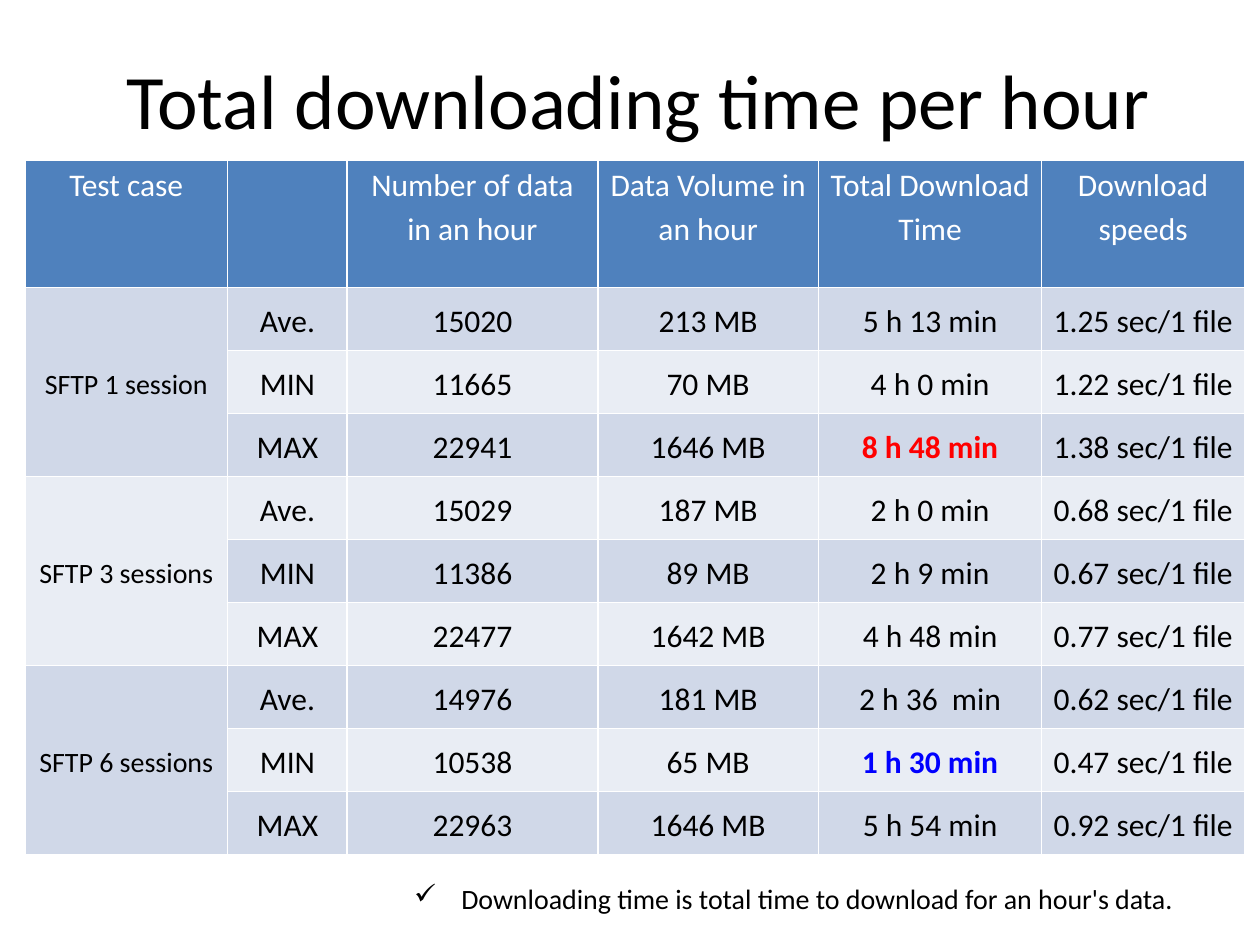
"""Build a slide with a table of total downloading time per hour."""
from lxml import etree
from pptx import Presentation
from pptx.dml.color import RGBColor
from pptx.enum.text import MSO_ANCHOR, PP_ALIGN
from pptx.oxml.ns import qn
from pptx.util import Cm, Pt

CENTER, LEFT = PP_ALIGN.CENTER, PP_ALIGN.LEFT
TOP, MIDDLE = MSO_ANCHOR.TOP, MSO_ANCHOR.MIDDLE
FONT = "Calibri"
COLORS = {
    "white": "FFFFFF",
    "black": "000000",
    "header": "4F81BD",
    "dark_band": "D0D8E8",
    "light_band": "E9EDF4",
    "slowest": "FF0000",
    "fastest": "0000FF",
}
HEADERS = ["Test case", "", "Number of data in an hour", "Data Volume in an hour",
           "Total Download Time", "Download speeds"]
SESSIONS = {
    "SFTP 1 session": [
        ["Ave.", "15020", "213 MB", "5 h 13 min", "1.25 sec/1 file"],
        ["MIN", "11665", "70 MB", "4 h 0 min", "1.22 sec/1 file"],
        ["MAX", "22941", "1646 MB", "8 h 48 min", "1.38 sec/1 file"],
    ],
    "SFTP 3 sessions": [
        ["Ave.", "15029", "187 MB", "2 h 0 min", "0.68 sec/1 file"],
        ["MIN", "11386", "89 MB", "2 h 9 min", "0.67 sec/1 file"],
        ["MAX", "22477", "1642 MB", "4 h 48 min", "0.77 sec/1 file"],
    ],
    "SFTP 6 sessions": [
        ["Ave.", "14976", "181 MB", "2 h 36  min", "0.62 sec/1 file"],
        ["MIN", "10538", "65 MB", "1 h 30 min", "0.47 sec/1 file"],
        ["MAX", "22963", "1646 MB", "5 h 54 min", "0.92 sec/1 file"],
    ],
}
HIGHLIGHTS = {"8 h 48 min": "slowest", "1 h 30 min": "fastest"}
COLUMN_WIDTHS = [4.09, 2.41, 5.05, 4.45, 4.5, 4.09]
HEADER_HEIGHT, ROW_HEIGHT = 2.56, 1.27


def write_text(text_frame, text, size=18, color="black", bold=False, align=CENTER,
               line_spacing=None):
    paragraph = text_frame.paragraphs[0]
    paragraph.alignment = align
    if line_spacing:
        paragraph.line_spacing = line_spacing
    run = paragraph.add_run()
    run.text = text
    run.font.name = FONT
    run.font.size = Pt(size)
    run.font.bold = bold
    run.font.color.rgb = RGBColor.from_string(COLORS[color])


def fill_cell(cell, text, fill, anchor=MIDDLE, **text_format):
    cell.fill.solid()
    cell.fill.fore_color.rgb = RGBColor.from_string(COLORS[fill])
    cell.vertical_anchor = anchor
    cell.margin_left = cell.margin_right = Cm(0.18)
    cell.margin_top = cell.margin_bottom = 0
    if text:
        write_text(cell.text_frame, text, line_spacing=1.15, **text_format)


presentation = Presentation()
presentation.slide_width, presentation.slide_height = Cm(25.4), Cm(19.05)
slide = presentation.slides.add_slide(presentation.slide_layouts[5])

title = slide.shapes.title
title.left, title.top, title.width, title.height = Cm(1.27), Cm(0.76), Cm(22.86), Cm(2.46)
title.text_frame.vertical_anchor = MIDDLE
write_text(title.text_frame, " Total downloading time per hour", size=44)

row_count = sum(len(rows) for rows in SESSIONS.values())
table = slide.shapes.add_table(
    row_count + 1, len(HEADERS), Cm(0.5), Cm(3.24),
    Cm(sum(COLUMN_WIDTHS)), Cm(HEADER_HEIGHT + row_count * ROW_HEIGHT)).table
for column, width in zip(table.columns, COLUMN_WIDTHS):
    column.width = Cm(width)
for row in table.rows:
    row.height = Cm(ROW_HEIGHT)
table.rows[0].height = Cm(HEADER_HEIGHT)

for column_index, header in enumerate(HEADERS):
    fill_cell(table.cell(0, column_index), header, "header", anchor=TOP, color="white")

row_index = 1
for session, rows in SESSIONS.items():
    session_cell = table.cell(row_index, 0)
    session_cell.merge(table.cell(row_index + len(rows) - 1, 0))
    fill_cell(session_cell, session, "dark_band" if row_index % 2 else "light_band", size=16)
    for values in rows:
        band = "dark_band" if row_index % 2 else "light_band"
        for column_index, value in enumerate(values, start=1):
            fill_cell(table.cell(row_index, column_index), value, band,
                      color=HIGHLIGHTS.get(value, "black"), bold=value in HIGHLIGHTS)
        row_index += 1

note = slide.shapes.add_textbox(Cm(8.1), Cm(17.65), Cm(16.64), Cm(1.02))
note.fill.solid()
note.fill.fore_color.rgb = RGBColor.from_string(COLORS["white"])
note.text_frame.word_wrap = True
properties = note.text_frame.paragraphs[0]._p.get_or_add_pPr()
properties.set("marL", str(Cm(0.95)))
properties.set("indent", str(-Cm(0.95)))
etree.SubElement(properties, qn("a:buChar")).set("char", "✓")
write_text(note.text_frame, "Downloading time is total time to download for an hour's data.",
           size=16, align=LEFT)

presentation.save("out.pptx")
